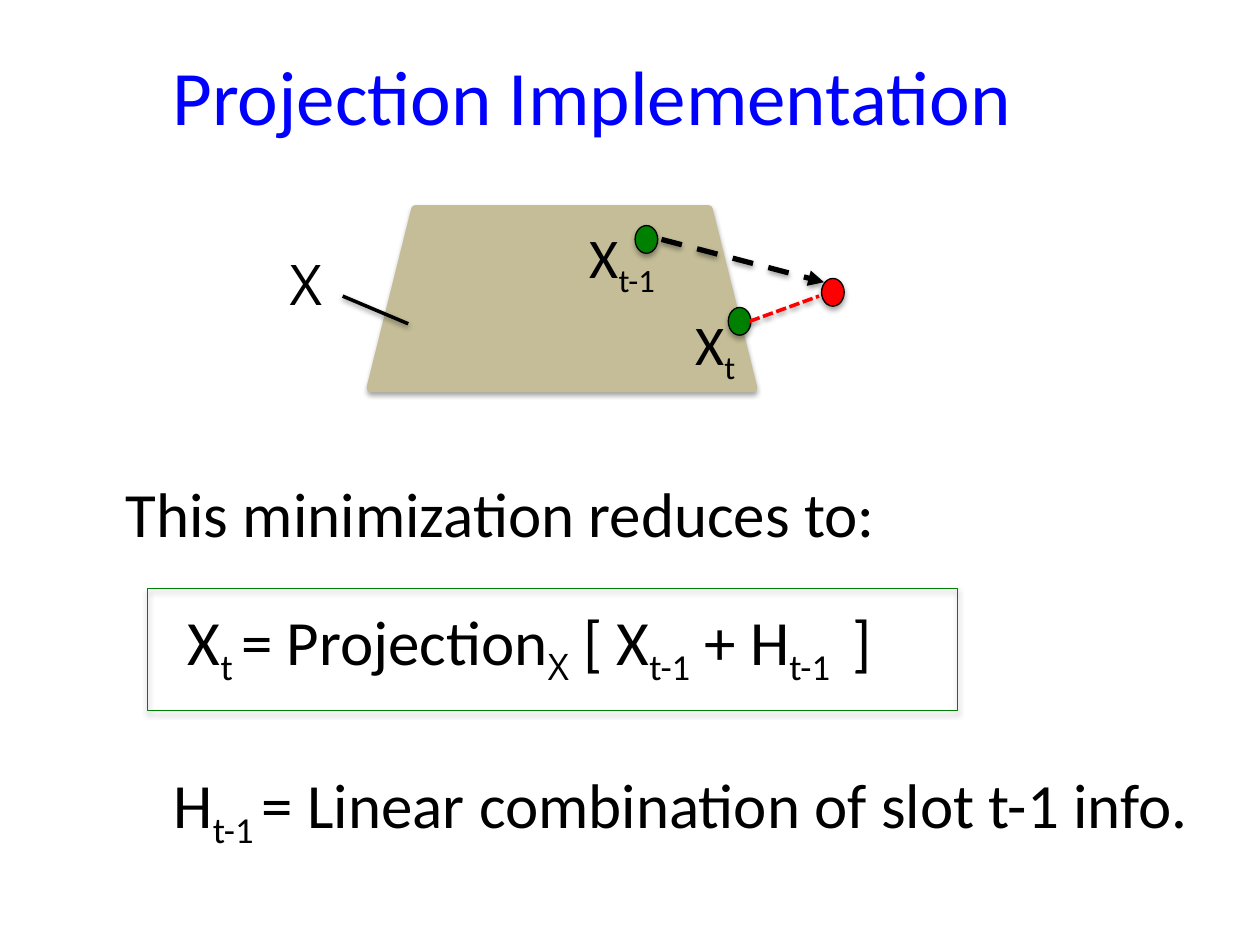
from lxml.etree import SubElement
from pptx import Presentation
from pptx.dml.color import RGBColor
from pptx.enum.dml import MSO_LINE
from pptx.enum.shapes import MSO_CONNECTOR, MSO_SHAPE
from pptx.enum.text import MSO_ANCHOR, MSO_AUTO_SIZE, PP_ALIGN
from pptx.oxml.ns import qn
from pptx.util import Inches, Pt

BLACK = RGBColor(0x00, 0x00, 0x00)
BLUE = RGBColor(0x00, 0x00, 0xFF)
GREEN = RGBColor(0x00, 0x80, 0x00)
RED = RGBColor(0xFF, 0x00, 0x00)
TAN = RGBColor(0xC4, 0xBD, 0x97)

COLUMNS, ROWS = 100, 75  # grid of square cells over the slide
BODY, SYMBOL = "Calibri", "Open Sans"


class SlideBuilder:
    """Holds the grid, the text style and the current slide."""

    def __init__(self, presentation):
        self.column = presentation.slide_width / COLUMNS
        self.row = presentation.slide_height / ROWS
        self.slide = presentation.slides.add_slide(presentation.slide_layouts[5])
        self.shapes = self.slide.shapes

    def place(self, *cells):
        steps = (self.column, self.row) * 2
        return [round(cell * step) for cell, step in zip(cells, steps)]

    def style_run(self, run, size, color=BLACK, font=BODY):
        run.font.size, run.font.name = Pt(size), font
        run.font.color.rgb = color

    def cast_shadow(self, shape, alpha, distance):
        properties = shape.element.spPr
        effects = properties.find(qn("a:effectLst"))
        if effects is None:
            effects = SubElement(properties, qn("a:effectLst"))
        shadow = SubElement(effects, qn("a:outerShdw"), blurRad=str(Pt(3.1)),
                            dist=str(Pt(distance)), dir="5400000", rotWithShape="0")
        color = SubElement(shadow, qn("a:srgbClr"), val=str(BLACK))
        SubElement(color, qn("a:alpha"), val=str(alpha * 1000))

    def title(self, text, cells):
        title = self.shapes.title
        title.left, title.top, title.width, title.height = self.place(*cells)
        title.text_frame.text = text
        title.text_frame.vertical_anchor = MSO_ANCHOR.MIDDLE
        paragraph = title.text_frame.paragraphs[0]
        paragraph.alignment = PP_ALIGN.CENTER
        self.style_run(paragraph.runs[0], 44, BLUE)

    def text(self, lines, cells, size, gap=0, font=BODY):
        """Each line lists its parts: text, or (subscript, font)."""
        frame = self.shapes.add_textbox(*self.place(*cells)).text_frame
        frame.word_wrap = False
        frame.auto_size = MSO_AUTO_SIZE.SHAPE_TO_FIT_TEXT
        for index, parts in enumerate(lines):
            paragraph = frame.add_paragraph() if index else frame.paragraphs[0]
            paragraph.space_before = Pt(gap if index else 0)
            for part in parts:
                subscript = isinstance(part, tuple)
                wording, part_font = part if subscript else (part, font)
                run = paragraph.add_run()
                run.text = wording
                self.style_run(run, size, font=part_font)
                if subscript:
                    run.font._element.set("baseline", "-25000")

    def shape(self, kind, cells, fill=None, line=BLACK, width=0.75):
        shape = self.shapes.add_shape(kind, *self.place(*cells))
        if fill is None:
            shape.fill.background()
        else:
            shape.fill.solid()
            shape.fill.fore_color.rgb = fill
        shape.line.color.rgb = line
        shape.line.width = Pt(width)
        shape.shadow.inherit = False
        self.cast_shadow(shape, 35, 1.8)

    def dot(self, left, top, fill):
        self.shape(MSO_SHAPE.OVAL, (left, top, 1.8, 2.2), fill)

    def line(self, ends, color=BLACK, width=2, dash=None, arrow=False):
        line = self.shapes.add_connector(MSO_CONNECTOR.STRAIGHT, *self.place(*ends))
        line.line.color.rgb = color
        line.line.width = Pt(width)
        if dash is not None:
            line.line.dash_style = dash
        if arrow:
            SubElement(line.element.spPr.find(qn("a:ln")), qn("a:tailEnd"), type="triangle")
        self.cast_shadow(line, 38, 1.6)


def sub(text, font=BODY):
    return text, font


def main():
    presentation = Presentation()
    presentation.slide_width, presentation.slide_height = Inches(10), Inches(7.5)
    builder = SlideBuilder(presentation)

    # Title and formulas
    builder.title("Projection Implementation", (0.9, 1.3, 92.2, 12.5))
    builder.text([["This minimization reduces to:"]], (9, 37.2, 62.3, 7.1), 36)
    builder.text([
        [" X", sub("t "), "= Projection", sub("X", SYMBOL), " [ X", sub("t-1"),
         " + H", sub("t-1 "), " ]"],
        ["H", sub("t-1 "), "= Linear combination of slot t-1 info."],
    ], (12.8, 47.3, 84.4, 19.2), 36, gap=44)

    # Feasible set X
    builder.shape(MSO_SHAPE.TRAPEZOID, (29.4, 16.6, 30.4, 14.2), TAN, TAN, 4.5)
    builder.text([["X"]], (22, 19.3, 6.2, 6.4), 32, font=SYMBOL)
    builder.line((27.2, 23.5, 32.4, 25.7))

    # Step out of the set and projection back onto it
    builder.dot(50.4, 17.9, GREEN)
    builder.text([["X", sub("t-1")]], (45.8, 17.2, 7.8, 6.4), 32)
    builder.dot(57.8, 24.4, GREEN)
    builder.line((59.5, 25.5, 65, 23.5), RED, dash=MSO_LINE.SQUARE_DOT)
    builder.dot(65.2, 22.1, RED)
    builder.line((52.5, 19, 65.4, 22.4), width=3, dash=MSO_LINE.DASH, arrow=True)
    builder.text([["X", sub("t")]], (54.2, 24.1, 5.4, 6.4), 32)

    # Frame around the projection formula
    builder.shape(MSO_SHAPE.RECTANGLE, (11.7, 46.7, 64.3, 9.7), line=GREEN)

    presentation.save("out.pptx")


if __name__ == "__main__":
    main()
